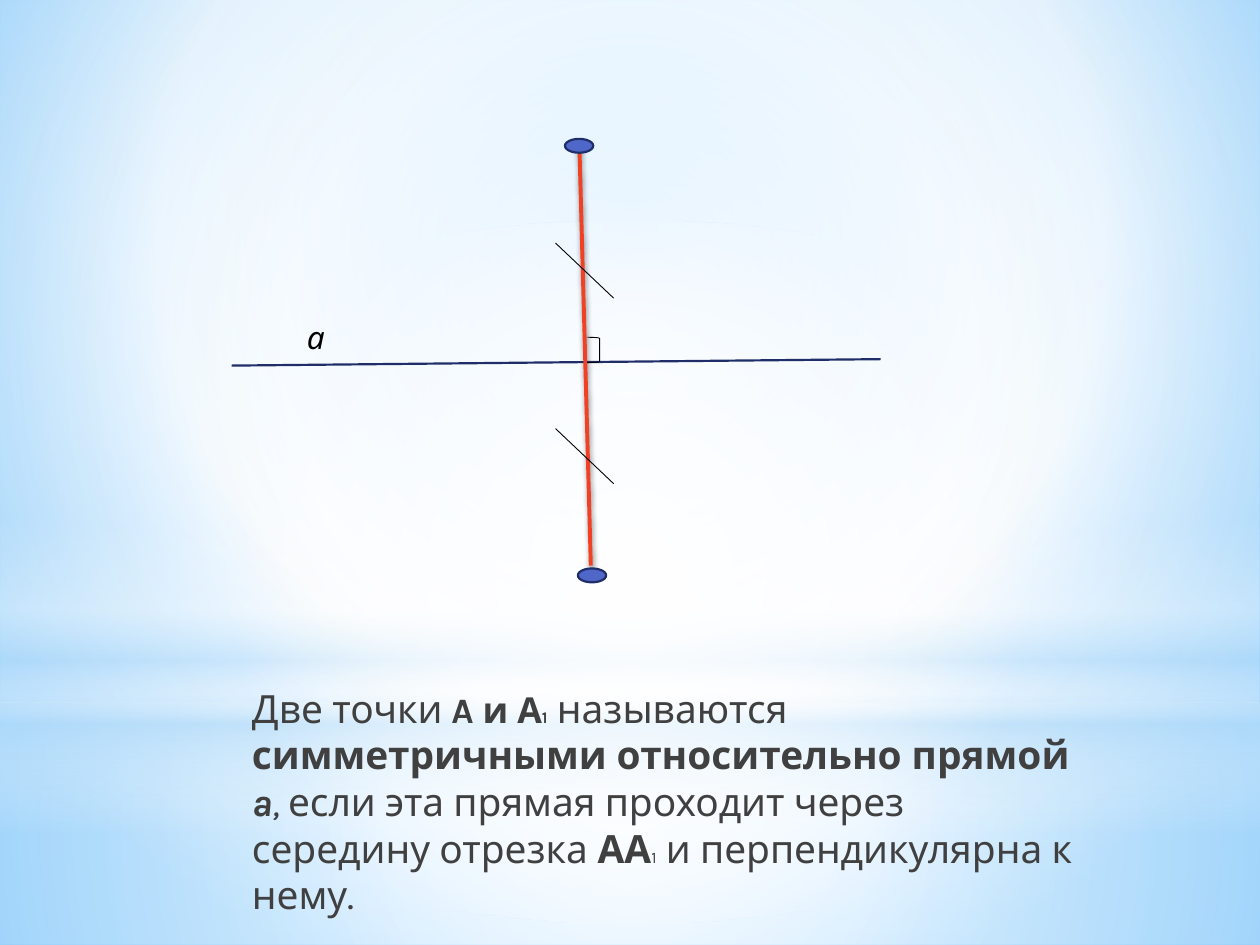
from lxml.etree import SubElement
from pptx import Presentation
from pptx.dml.color import RGBColor
from pptx.enum.shapes import MSO_CONNECTOR, MSO_SHAPE
from pptx.enum.text import PP_ALIGN
from pptx.oxml.ns import qn
from pptx.util import Cm, Pt

HUES = {
    "white": "FFFFFF", "sky": "9ED5FF", "azure": "5BB9FF", "pale": "B4DCFA",
    "navy": "1F2E69", "blue": "4E67C8", "red": "F14124", "black": "000000",
    "gray": "404040",
}
WIDE, HIGH, SPLIT = 25.4, 19.05, 14.17
MID = (50, 50, 50, 50)


def rgb(name):
    return RGBColor.from_string(HUES[name])


def tag(root, name, **attrs):
    return SubElement(root, qn(name), {key: str(val) for key, val in attrs.items()})


def tint(root, name, alpha=100):
    hue = tag(root, "a:srgbClr", val=HUES[name])
    if alpha < 100:
        tag(hue, "a:alpha", val=alpha * 1000)


def blend(fill, root, stops, focus=None, angle=90):
    fill.gradient()
    grad = root.find(".//" + qn("a:gradFill"))
    for child in list(grad):
        grad.remove(child)
    row = tag(grad, "a:gsLst")
    for pos, *hue in stops:
        tint(tag(row, "a:gs", pos=pos * 1000), *hue)
    if focus:
        ring = tag(grad, "a:path", path="circle")
        tag(ring, "a:fillToRect", **{side: val * 1000 for side, val in zip("ltrb", focus)})
    else:
        tag(grad, "a:lin", ang=angle * 60000, scaled=0)


def write(para, text, size=22.2, hue="gray", bold=False, italic=False):
    run = para.add_run()
    run.text = text
    font = run.font
    font.name, font.size = "Karla", Pt(size)
    font.bold, font.italic = bold, italic
    font.color.rgb = rgb(hue)


class Board:
    def __init__(self, slide, edge="navy", weight=1.25):
        self.slide = slide
        self.edge = edge
        self.weight = weight

    def back(self, stops, focus):
        blend(self.slide.background.fill, self.slide.element, stops, focus)

    def shape(self, kind, x, y, w, h):
        item = self.slide.shapes.add_shape(kind, Cm(x), Cm(y), Cm(w), Cm(h))
        item.shadow.inherit = False
        item.fill.background()
        item.line.fill.background()
        return item

    def glow(self, y, h, stops, focus=None, kind=MSO_SHAPE.RECTANGLE):
        item = self.shape(kind, 0, y, WIDE, h)
        blend(item.fill, item.element, stops, focus)

    def ink(self, line, hue=None, weight=None):
        line.color.rgb = rgb(hue or self.edge)
        line.width = Pt(weight or self.weight)

    def dot(self, x, y):
        item = self.shape(MSO_SHAPE.FLOWCHART_CONNECTOR, x, y, 0.57, 0.28)
        item.fill.solid()
        item.fill.fore_color.rgb = rgb("blue")
        self.ink(item.line)

    def corner(self, x, y, w, h):
        item = self.shape(MSO_SHAPE.RIGHT_BRACKET, x, y, w, h)
        self.ink(item.line, "black", 0.5)

    def line(self, x1, y1, x2, y2, hue=None, weight=None, shade=False):
        item = self.slide.shapes.add_connector(
            MSO_CONNECTOR.STRAIGHT, Cm(x1), Cm(y1), Cm(x2), Cm(y2))
        self.ink(item.line, hue, weight)
        effect = tag(item.element.spPr, "a:effectLst")
        if shade:
            drop = tag(effect, "a:outerShdw", blurRad=Pt(3.1), dist=Pt(1.8),
                       dir=90 * 60000, rotWithShape=0)
            tint(drop, "black", 45)

    def text(self, x, y, w, h):
        frame = self.slide.shapes.add_textbox(Cm(x), Cm(y), Cm(w), Cm(h)).text_frame
        frame.word_wrap = True
        return frame.paragraphs[0]


def main():
    deck = Presentation()
    deck.slide_width, deck.slide_height = Cm(WIDE), Cm(HIGH)
    board = Board(deck.slides.add_slide(deck.slide_layouts[6]))

    board.back([(0, "sky"), (60, "white"), (100, "azure")], (20, 10, 20, 60))
    board.glow(SPLIT, HIGH - SPLIT,
               [(0, "white", 91), (37, "white", 76), (100, "pale", 79)], MID)
    board.glow(0, SPLIT,
               [(0, "white", 89), (48, "white", 62), (100, "pale", 79)], MID)
    board.glow(10.46, 6.35,
               [(0, "white", 0), (29, "white", 30), (45, "pale", 40),
                (55, "white", 26), (65, "pale", 60), (100, "white", 0)])
    board.glow(4.45, SPLIT, [(0, "white"), (56, "white", 0)], MID, MSO_SHAPE.OVAL)

    para = board.text(4.7, 13.67, 17.32, 4.7)
    para.line_spacing = 1.0
    para.space_before, para.space_after = Pt(4), Pt(3)
    para._p.get_or_add_pPr().set("marL", str(Cm(0.13)))
    write(para, "Две точки")
    write(para, " ", size=20.4)
    write(para, "A и А", size=20.4, bold=True)
    write(para, "1", size=9.2, bold=True)
    write(para, " называются ")
    write(para, "симметричными относительно прямой ", bold=True)
    write(para, "a", bold=True, italic=True)
    write(para, ", ", italic=True)
    write(para, "если эта прямая проходит через середину отрезка ")
    write(para, "АА", bold=True)
    write(para, "1", size=9.2)
    write(para, " и перпендикулярна к нему.")

    board.line(4.67, 7.37, 17.75, 7.24)
    name = board.text(3.42, 6.29, 5.89, 1.02)
    name.alignment = PP_ALIGN.CENTER
    write(name, "а", size=18, hue="black", italic=True)

    board.line(11.68, 2.95, 11.91, 11.4, "red", 2.25, shade=True)
    board.dot(11.65, 11.46)
    board.dot(11.39, 2.8)
    for top in (4.9, 8.64):
        board.line(11.2, top, 12.37, top + 1.11, "black", 0.5)
    board.corner(11.84, 6.8, 0.25, 0.51)

    deck.save("out.pptx")


if __name__ == "__main__":
    main()
